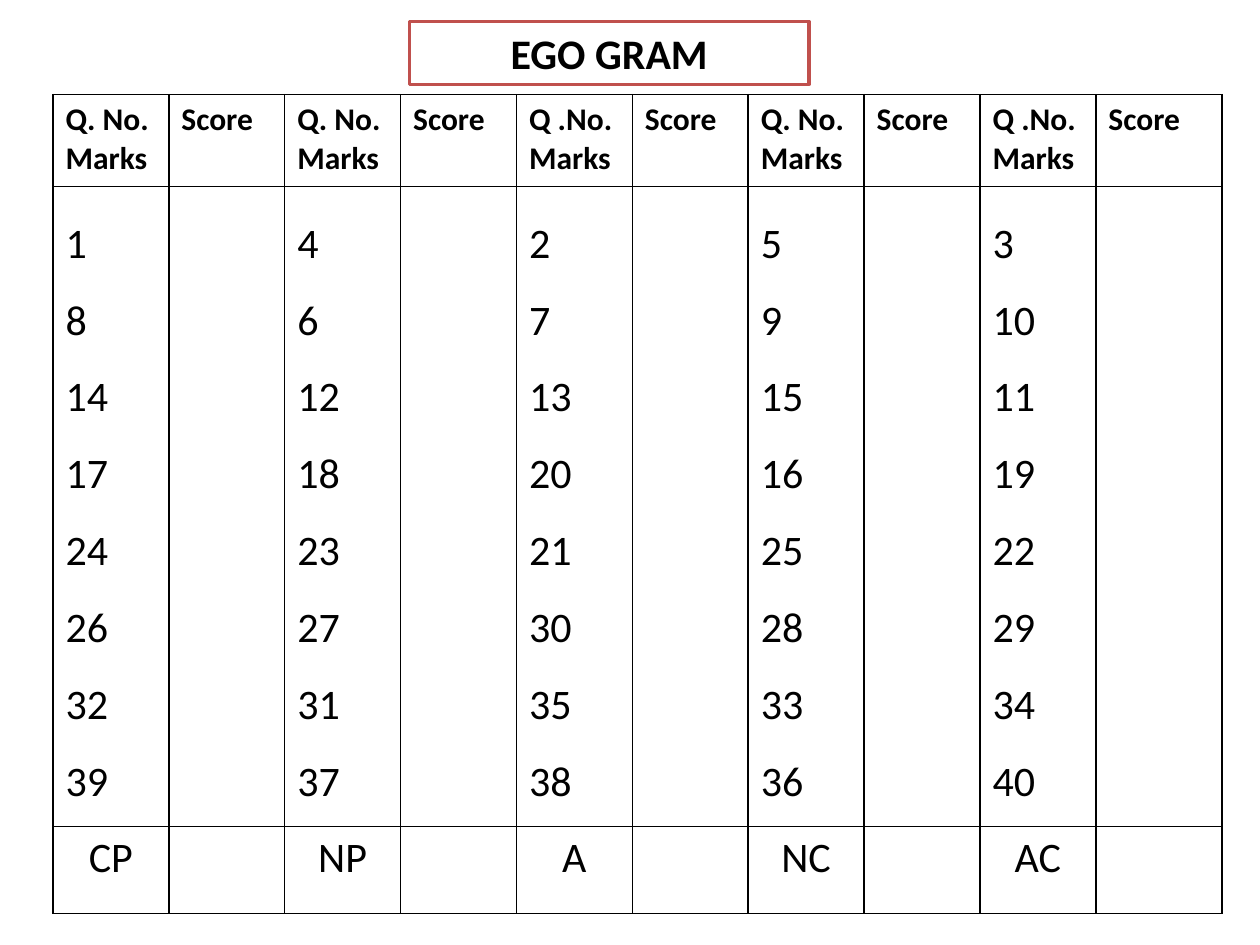
from lxml.etree import SubElement
from pptx import Presentation
from pptx.dml.color import RGBColor
from pptx.enum.text import MSO_ANCHOR, MSO_AUTO_SIZE, PP_ALIGN
from pptx.oxml.ns import qn
from pptx.util import Inches, Pt

COLORS = {"ink": "000000", "paper": "FFFFFF", "frame": "C0504D"}
HEAD = {"name": "Calibri", "size": Pt(18), "bold": True}
BODY = {"name": "Calibri", "size": Pt(24), "bold": False}
TITLE = {"name": "Calibri", "size": Pt(24), "bold": True}
MARKS = {
    "CP": [1, 8, 14, 17, 24, 26, 32, 39],
    "NP": [4, 6, 12, 18, 23, 27, 31, 37],
    "A": [2, 7, 13, 20, 21, 30, 35, 38],
    "NC": [5, 9, 15, 16, 25, 28, 33, 36],
    "AC": [3, 10, 11, 19, 22, 29, 34, 40],
}
HEADS = ["Q. No. Marks", "Q. No. Marks", "Q .No. Marks", "Q. No. Marks", "Q .No. Marks"]
WIDTHS = [0.92] * 9 + [1]
HEIGHTS = [0.73, 5.08, 0.69]


def write(frame, lines, style, align=PP_ALIGN.LEFT, space=None):
    frame.text = "\n".join(str(line) for line in lines)
    for para in frame.paragraphs:
        para.alignment = align
        para.line_spacing = space
        for run in para.runs:
            run.font.color.rgb = RGBColor.from_string(COLORS["ink"])
            for key, value in style.items():
                setattr(run.font, key, value)


def dress(cell):
    # Borders come before the fill in the cell properties
    props = cell._tc.get_or_add_tcPr()
    for side in ("a:lnL", "a:lnR", "a:lnT", "a:lnB"):
        line = SubElement(props, qn(side), w=str(Pt(1)))
        fill = SubElement(line, qn("a:solidFill"))
        SubElement(fill, qn("a:srgbClr"), val=COLORS["ink"])
    cell.fill.solid()
    cell.fill.fore_color.rgb = RGBColor.from_string(COLORS["paper"])


deck = Presentation()
deck.slide_width, deck.slide_height = Inches(10), Inches(7.5)
slide = deck.slides.add_slide(deck.slide_layouts[5])

# Framed title
title = slide.shapes.title
place = {"left": 3.25, "top": 0.17, "width": 3.17, "height": 0.5}
for key, value in place.items():
    setattr(title, key, Inches(value))
title.fill.solid()
title.fill.fore_color.rgb = RGBColor.from_string(COLORS["paper"])
title.line.color.rgb = RGBColor.from_string(COLORS["frame"])
title.line.width = Pt(2)
frame = title.text_frame
write(frame, ["EGO GRAM"], TITLE, PP_ALIGN.CENTER)
layout = {"word_wrap": True, "auto_size": MSO_AUTO_SIZE.NONE, "vertical_anchor": MSO_ANCHOR.MIDDLE}
for key, value in layout.items():
    setattr(frame, key, value)

# Score table grid
grid = slide.shapes.add_table(
    len(HEIGHTS), len(WIDTHS), Inches(0.42), Inches(0.75),
    Inches(sum(WIDTHS)), Inches(sum(HEIGHTS))).table
grid.first_row = grid.horz_banding = False
for col, width in zip(grid.columns, WIDTHS):
    col.width = Inches(width)
for row, height in zip(grid.rows, HEIGHTS):
    row.height = Inches(height)
for cell in grid.iter_cells():
    dress(cell)

# Each ego state takes a question column and a score column
for i, (state, marks) in enumerate(MARKS.items()):
    col = 2 * i
    write(grid.cell(0, col).text_frame, [HEADS[i]], HEAD)
    write(grid.cell(0, col + 1).text_frame, ["Score"], HEAD)
    write(grid.cell(1, col).text_frame, marks, BODY, space=1.5)
    write(grid.cell(2, col).text_frame, [state], BODY, PP_ALIGN.CENTER)

deck.save("out.pptx")
